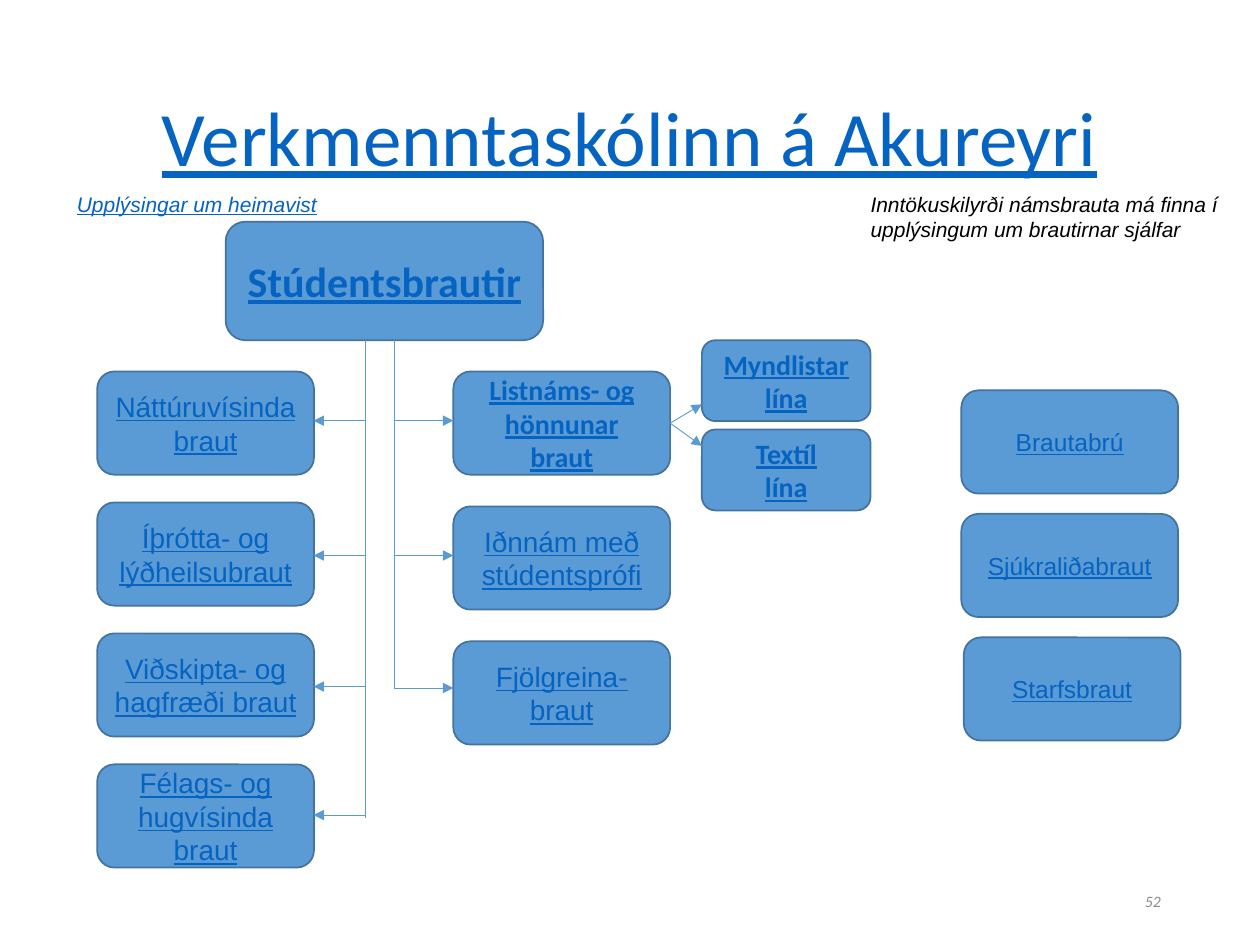
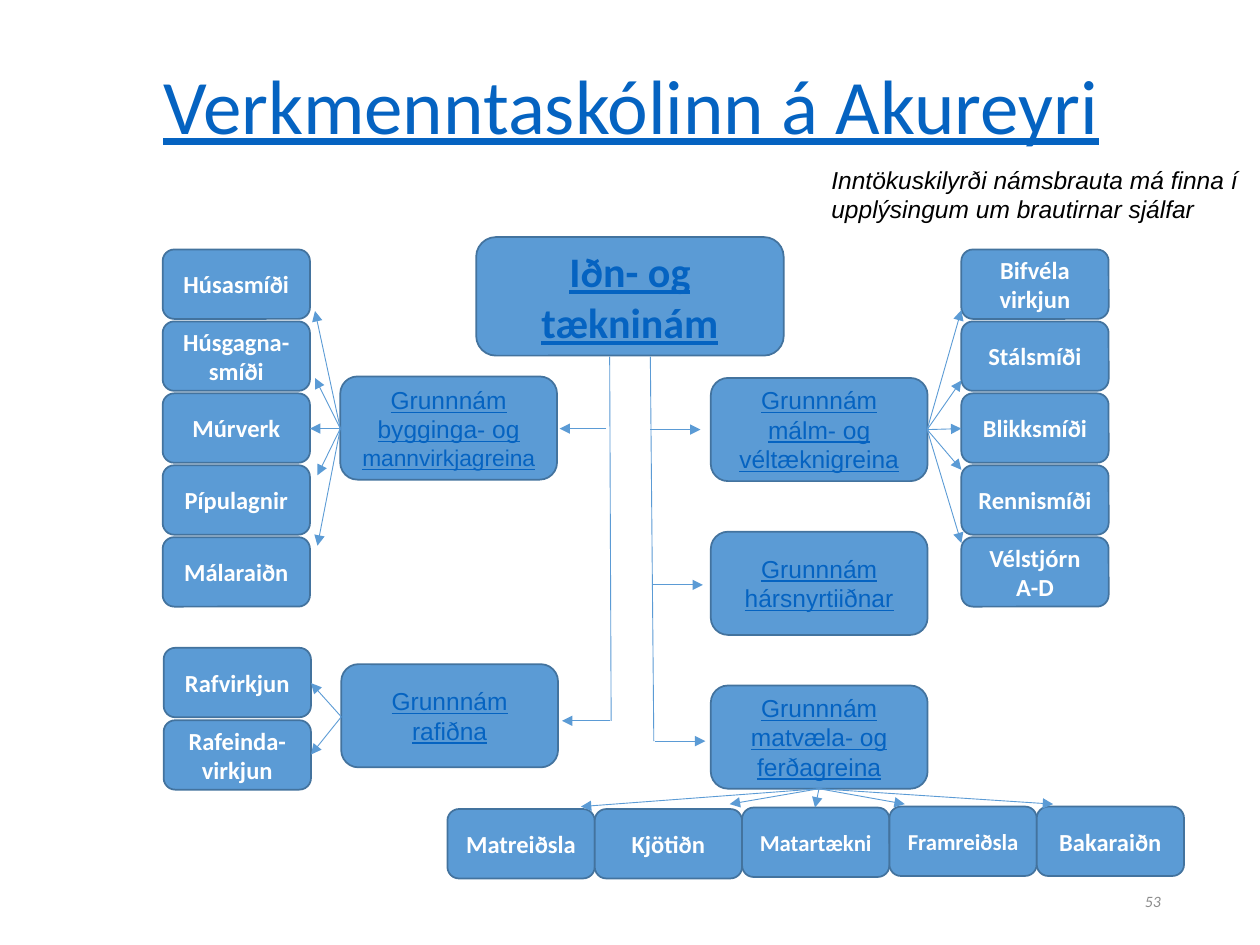
from dataclasses import dataclass, field
from typing import NamedTuple

import lxml.etree
import pptx
import pptx.dml.color
import pptx.enum.shapes
import pptx.enum.text
import pptx.oxml.ns
import pptx.util

Cm = pptx.util.Cm
ALIGN = pptx.enum.text.PP_ALIGN
ANCHOR = pptx.enum.text.MSO_ANCHOR


class Point(NamedTuple):
    x: float
    y: float


class Size(NamedTuple):
    width: float
    height: float


class TextStyle(NamedTuple):
    font: dict
    colour: str


def text_style(name: str, size: float, colour: str, **font) -> TextStyle:
    return TextStyle({"name": name, "size": pptx.util.Pt(size), **font}, colour)


LINK, WHITE, BLACK, GREY = "0563C1", "FFFFFF", "000000", "8C8C8C"


@dataclass(frozen=True)
class Theme:
    box_fill: str = "5B9BD5"
    box_line: str = "43739E"
    connector: str = "5B9BD5"
    title: TextStyle = text_style("Calibri", 44, LINK, underline=True)
    heading: TextStyle = text_style("Calibri", 24, LINK, bold=True, underline=True)
    bold_link: TextStyle = text_style("Calibri", 16, LINK, bold=True, underline=True)
    link: TextStyle = text_style("Arial", 16, LINK, underline=True)
    small_link: TextStyle = text_style("Arial", 14, LINK, underline=True)
    tight_link: TextStyle = text_style("Arial", 13, LINK, underline=True)
    trade: TextStyle = text_style("Calibri", 14, WHITE, bold=True)
    tight_trade: TextStyle = text_style("Calibri", 13, WHITE, bold=True)
    info_link: TextStyle = text_style("Arial", 12, LINK, italic=True, underline=True)
    small_note: TextStyle = text_style("Arial", 12, BLACK, italic=True)
    note: TextStyle = text_style("Arial", 14, BLACK, italic=True)
    number: TextStyle = text_style("Calibri", 9, GREY, italic=True)


THEME = Theme()
PROGRAMME = Size(4.37, 2.08)
TRADE = Size(2.97, 1.4)
ART_LINE = Size(3.4, 1.63)
TITLE = "Verkmenntaskólinn á Akureyri"
NOTE = "Inntökuskilyrði námsbrauta má finna í upplýsingum um brautirnar sjálfar"


@dataclass(frozen=True)
class Box:
    """A rounded box; the ending continues the text in its own style."""
    text: str
    at: Point
    size: Size
    style: TextStyle
    ending: str = ""
    ending_style: TextStyle = THEME.tight_link


@dataclass(frozen=True)
class Link:
    start: Point
    end: Point
    arrow: bool = True


@dataclass(frozen=True)
class Note:
    text: str
    at: Point
    size: Size
    style: TextStyle
    align: ALIGN = ALIGN.LEFT
    anchor: ANCHOR = ANCHOR.TOP


@dataclass(frozen=True)
class Page:
    number: str
    title_at: Point
    notes: list[Note]
    boxes: list[Box] = field(default_factory=list)
    links: list[Link] = field(default_factory=list)


def column(texts: list[str], at: Point, pitch: float, size: Size, style: TextStyle) -> list[Box]:
    return [Box(text, Point(at.x, at.y + row * pitch), size, style)
            for row, text in enumerate(texts)]


def fan(start: Point, ends: list[tuple[float, float]]) -> list[Link]:
    """Arrows from one point to several."""
    return [Link(start, Point(*end)) for end in ends]


def branches(trunk_x: float, end_x: float, rows: list[float]) -> list[Link]:
    """Level arrows from a vertical trunk."""
    return [Link(Point(trunk_x, y), Point(end_x, y)) for y in rows]


def rgb(colour: str) -> pptx.dml.color.RGBColor:
    return pptx.dml.color.RGBColor.from_string(colour)


def add_run(paragraph, text: str, style: TextStyle) -> None:
    run = paragraph.add_run()
    run.text = text
    for name, value in style.font.items():
        setattr(run.font, name, value)
    run.font.color.rgb = rgb(style.colour)


def write(frame, text: str, style: TextStyle, align: ALIGN, anchor: ANCHOR) -> None:
    for name, value in {"word_wrap": True, "vertical_anchor": anchor}.items():
        setattr(frame, name, value)
    for index, line in enumerate(text.split("\n")):
        paragraph = frame.add_paragraph() if index else frame.paragraphs[0]
        paragraph.alignment = align
        add_run(paragraph, line, style)


def add_title(slide, at: Point) -> None:
    title = slide.shapes.title
    bounds = {"left": at.x, "top": at.y, "width": 21.89, "height": 3.68}
    for name, value in bounds.items():
        setattr(title, name, Cm(value))
    write(title.text_frame, TITLE, THEME.title, ALIGN.CENTER, ANCHOR.MIDDLE)
    title.text_frame.auto_size = pptx.enum.text.MSO_AUTO_SIZE.NONE
    title.text_frame.paragraphs[0].line_spacing = 0.9


def add_note(slide, note: Note) -> None:
    shape = slide.shapes.add_textbox(*map(Cm, (*note.at, *note.size)))
    write(shape.text_frame, note.text, note.style, note.align, note.anchor)


def add_box(slide, box: Box) -> None:
    shape = slide.shapes.add_shape(
        pptx.enum.shapes.MSO_SHAPE.ROUNDED_RECTANGLE, *map(Cm, (*box.at, *box.size)))
    shape.shadow.inherit = False
    shape.fill.solid()
    shape.fill.fore_color.rgb = rgb(THEME.box_fill)
    shape.line.color.rgb = rgb(THEME.box_line)
    shape.line.width = pptx.util.Pt(1)
    write(shape.text_frame, box.text, box.style, ALIGN.CENTER, ANCHOR.MIDDLE)
    if box.ending:
        add_run(shape.text_frame.paragraphs[-1], box.ending, box.ending_style)


def add_link(slide, link: Link) -> None:
    connector = slide.shapes.add_connector(
        pptx.enum.shapes.MSO_CONNECTOR.STRAIGHT, *map(Cm, (*link.start, *link.end)))
    connector.line.color.rgb = rgb(THEME.connector)
    connector.line.width = pptx.util.Pt(0.5)
    qn = pptx.oxml.ns.qn
    properties = connector.element.spPr
    if link.arrow:
        lxml.etree.SubElement(properties.find(qn("a:ln")), qn("a:tailEnd"), type="triangle")
    lxml.etree.SubElement(properties, qn("a:effectLst"))


def academic_page() -> Page:
    left_trunk, right_trunk, trunk_top = 7.37, 7.95, 6.86
    boxes = [
        Box("Stúdentsbrautir", Point(4.55, 4.47), Size(6.4, 2.39), THEME.heading),
        *column(["Náttúruvísinda braut", "Íþrótta- og lýðheilsubraut",
                 "Viðskipta- og hagfræði braut", "Félags- og hugvísinda braut"],
                Point(1.96, 7.49), 2.64, PROGRAMME, THEME.link),
        Box("Listnáms- og hönnunar braut", Point(9.14, 7.49), PROGRAMME, THEME.bold_link),
        *column(["Iðnnám með stúdentsprófi", "Fjölgreina-\nbraut"],
                Point(9.14, 10.21), 2.72, PROGRAMME, THEME.link),
        *column(["Myndlistar lína", "Textíl\nlína"],
                Point(14.15, 6.86), 1.8, ART_LINE, THEME.bold_link),
        *column(["Brautabrú", "Sjúkraliðabraut"],
                Point(19.38, 7.87), 2.49, PROGRAMME, THEME.small_link),
        Box("Starfsbraut", Point(19.43, 12.85), PROGRAMME, THEME.small_link),
    ]
    links = [
        Link(Point(left_trunk, trunk_top), Point(left_trunk, 16.48), arrow=False),
        Link(Point(right_trunk, trunk_top), Point(right_trunk, 13.87), arrow=False),
        *branches(left_trunk, 6.32, [8.48, 11.2, 13.84, 16.43]),
        *branches(right_trunk, 9.14, [8.48, 11.2, 13.87]),
        *fan(Point(13.51, 8.53), [(14.15, 8.15), (14.15, 8.99)]),
    ]
    notes = [
        Note(NOTE, Point(17.3, 3.73), Size(8.94, 1.27), THEME.small_note),
        Note("Upplýsingar um heimavist", Point(1.3, 3.73), Size(6.65, 0.76), THEME.info_link),
    ]
    return Page("52", Point(1.75, 1.02), notes, boxes, links)


def vocational_page() -> Page:
    kitchen_trades = [
        ("Matreiðsla", 16.31, THEME.trade),
        ("Kjötiðn", 16.31, THEME.trade),
        ("Matartækni", 16.28, THEME.tight_trade),
        ("Framreiðsla", 16.26, THEME.tight_trade),
        ("Bakaraiðn", 16.26, THEME.trade),
    ]
    boxes = [
        Box("Iðn- og tækninám", Point(9.6, 4.78), Size(6.2, 2.39), THEME.heading),
        *column(["Grunnnám málm- og véltæknigreina", "Grunnnám hársnyrtiiðnar",
                 "Grunnnám matvæla- og ferðagreina"],
                Point(14.33, 7.62), 3.1, PROGRAMME, THEME.small_link),
        Box("Grunnnám bygginga- og ", Point(6.86, 7.59), PROGRAMME, THEME.small_link,
            ending="mannvirkjagreina"),
        Box("Grunnnám rafiðna", Point(6.88, 13.39), PROGRAMME, THEME.small_link),
        *column(["Húsasmíði", "Húsgagna- smíði", "Múrverk", "Pípulagnir", "Málaraiðn"],
                Point(3.28, 5.03), 1.45, TRADE, THEME.trade),
        *column(["Rafvirkjun", "Rafeinda- virkjun"],
                Point(3.3, 13.06), 1.46, TRADE, THEME.trade),
        *column(["Bifvéla virkjun", "Stálsmíði", "Blikksmíði", "Rennismíði", "Vélstjórn A-D"],
                Point(19.38, 5.03), 1.45, TRADE, THEME.trade),
        *[Box(text, Point(9.02 + index * TRADE.width, top), TRADE, style)
          for index, (text, top, style) in enumerate(kitchen_trades)],
    ]
    links = [
        Link(Point(12.29, 7.19), Point(12.32, 14.53), arrow=False),
        Link(Point(13.11, 7.19), Point(13.18, 14.94), arrow=False),
        *branches(12.22, 11.28, [8.64]),
        *branches(12.29, 11.33, [14.53]),
        *branches(13.11, 14.12, [8.66]),
        *branches(13.16, 14.17, [11.79]),
        *branches(13.21, 14.22, [14.94]),
        *fan(Point(6.86, 8.64),
             [(6.35, 6.27), (6.35, 7.62), (6.25, 8.64), (6.4, 9.58), (6.4, 11)]),
        *fan(Point(6.88, 14.45), [(6.27, 13.77), (6.27, 15.21)]),
        *fan(Point(18.69, 8.66), [(19.38, y) for y in (6.25, 7.67, 8.64, 9.47, 10.95)]),
        *fan(Point(16.51, 15.9), [(11.71, 16.26), (14.71, 16.21), (16.43, 16.28),
                                  (18.24, 16.21), (21.23, 16.21)]),
    ]
    notes = [Note(NOTE, Point(16.51, 3.2), Size(9.75, 1.45), THEME.note)]
    return Page("53", Point(1.78, 0.36), notes, boxes, links)


def add_page(presentation, page: Page) -> None:
    title_only = presentation.slide_layouts[5]
    slide = presentation.slides.add_slide(title_only)
    add_title(slide, page.title_at)
    number = Note(page.number, Point(17.93, 17.65), Size(5.72, 1.02), THEME.number,
                  ALIGN.RIGHT, ANCHOR.MIDDLE)
    for note in [*page.notes, number]:
        add_note(slide, note)
    for box in page.boxes:
        add_box(slide, box)
    for link in page.links:
        add_link(slide, link)


def main() -> None:
    presentation = pptx.Presentation()
    presentation.slide_width = Cm(25.4)
    presentation.slide_height = Cm(19.05)
    for page in (academic_page(), vocational_page()):
        add_page(presentation, page)
    presentation.save("out.pptx")


if __name__ == "__main__":
    main()
